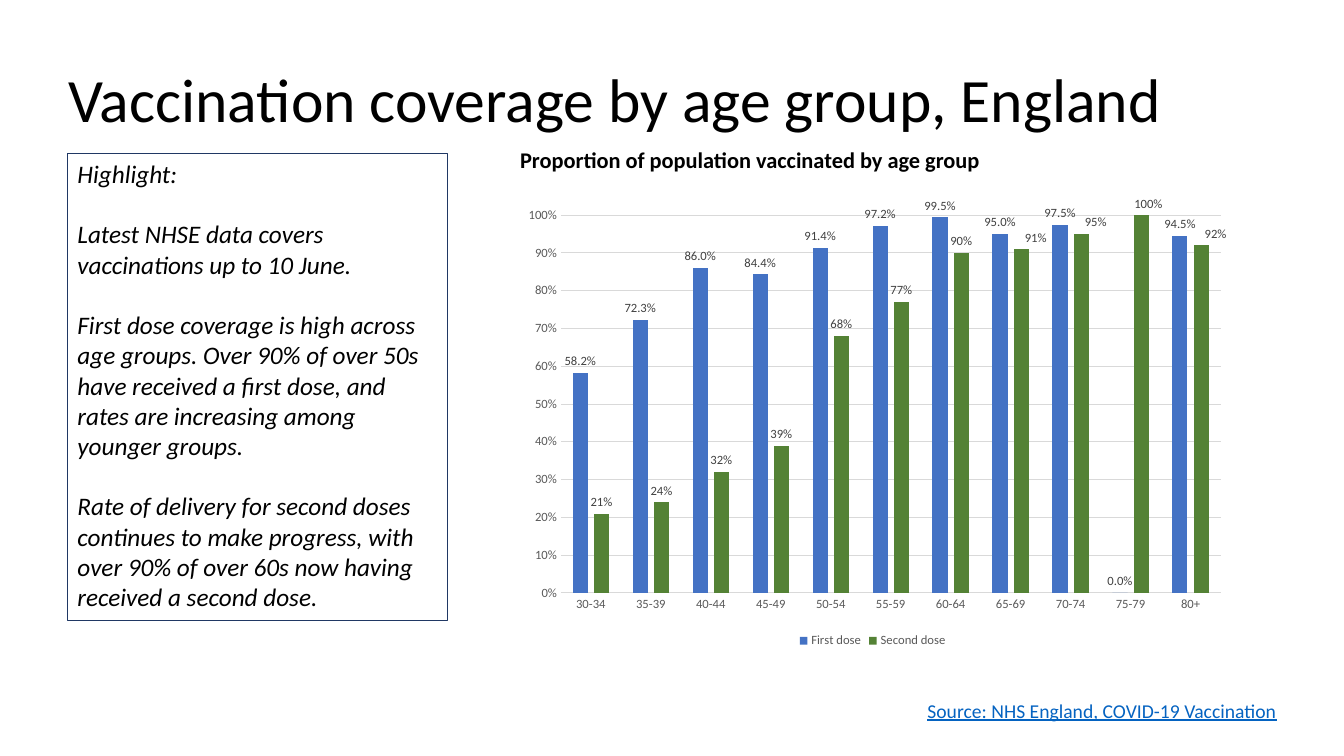
from copy import deepcopy

from lxml import etree
from pptx import Presentation
from pptx.chart.data import CategoryChartData
from pptx.dml.color import RGBColor
from pptx.enum.chart import XL_CHART_TYPE, XL_LABEL_POSITION, XL_LEGEND_POSITION, XL_TICK_MARK
from pptx.enum.shapes import MSO_SHAPE
from pptx.enum.text import MSO_ANCHOR, PP_ALIGN
from pptx.oxml import parse_xml
from pptx.oxml.ns import nsdecls, qn
from pptx.util import Inches, Pt

COLUMN = XL_CHART_TYPE.COLUMN_CLUSTERED
OUTSIDE = XL_LABEL_POSITION.OUTSIDE_END
BOTTOM = XL_LEGEND_POSITION.BOTTOM
NO_TICK = XL_TICK_MARK.NONE
RECT = MSO_SHAPE.RECTANGLE
TOP, MIDDLE = MSO_ANCHOR.TOP, MSO_ANCHOR.MIDDLE
LEFT = PP_ALIGN.LEFT

COLORS = {"text": "000000", "border": "203864", "source": "0563C1",
          "axis": "595959", "grid": "D9D9D9", "label": "404040",
          "first": "4472C4", "second": "548235"}

HIGHLIGHTS = [
    "Highlight:",
    "Latest NHSE data covers vaccinations up to 10 June.",
    "First dose coverage is high across age groups. Over 90% of over 50s have "
    "received a first dose, and rates are increasing among younger groups.",
    "Rate of delivery for second doses continues to make progress, with over "
    "90% of over 60s now having received a second dose.",
]
AGE_GROUPS = [f"{age}-{age + 4}" for age in range(30, 80, 5)] + ["80+"]
DOSES = [
    ("First dose", "first", "0.0%",
     [0.582, 0.723, 0.86, 0.844, 0.914, 0.972, 0.995, 0.95, 0.975, 0, 0.945]),
    ("Second dose", "second", "0%",
     [0.21, 0.24, 0.32, 0.39, 0.68, 0.77, 0.9, 0.91, 0.95, 1, 0.92]),
]
PLOT_AREA = {"x": 0.07, "y": 0.04, "w": 0.91, "h": 0.83}
LABEL_SHIFTS = {"65-69": 0.02, "70-74": 0.02, "75-79": 0.01, "80+": 0.02}


def rgb(name):
    """Return the named colour."""
    return RGBColor.from_string(COLORS[name])


def set_font(font, size, color="text", **formats):
    """Apply a font format."""
    for name, value in {"name": "Calibri", "size": Pt(size), **formats}.items():
        setattr(font, name, value)
    font.color.rgb = rgb(color)


def set_line(line, color):
    """Apply a thin solid line."""
    line.color.rgb = rgb(color)
    line.width = Pt(0.75)


def add_text(s, box, text, size, color="text", anchor=TOP, wrap=False, spacing=None, **formats):
    """Place one line of text in a box."""
    tf = s.shapes.add_textbox(*map(Inches, box)).text_frame
    tf.word_wrap = wrap
    tf.vertical_anchor = anchor
    p = tf.paragraphs[0]
    p.line_spacing = spacing
    r = p.add_run()
    r.text = text
    set_font(r.font, size, color, **formats)


def add_highlights(s, box):
    """Place the bordered panel of highlights."""
    sp = s.shapes.add_shape(RECT, *map(Inches, box))
    sp.shadow.inherit = False
    sp.fill.background()
    set_line(sp.line, "border")
    tf = sp.text_frame
    tf.word_wrap = True
    tf.vertical_anchor = TOP
    for i, text in enumerate(HIGHLIGHTS):
        p = tf.paragraphs[0] if i == 0 else tf.add_paragraph()
        p.alignment = LEFT
        if i:
            p.space_before = Pt(21.6)
        r = p.add_run()
        r.text = text
        set_font(r.font, 18, italic=True)


def make_layout(settings):
    """Return a manual layout element."""
    layout = parse_xml(f"<c:layout {nsdecls('c')}><c:manualLayout/></c:layout>")
    for tag, value in settings.items():
        etree.SubElement(layout[0], qn(f"c:{tag}")).set("val", str(value))
    return layout


def set_plot_area(chart):
    """Fix the inner plot area as shares of the chart."""
    plot_area = chart.element.find(".//" + qn("c:plotArea"))
    for old in plot_area.findall(qn("c:layout")):
        plot_area.remove(old)
    edges = {"layoutTarget": "inner", "xMode": "edge", "yMode": "edge"}
    plot_area.insert(0, make_layout({**edges, **PLOT_AREA}))


def shift_labels(series):
    """Move crowded labels right by a share of the chart width."""
    labels = series.data_labels._element
    shared = [part for part in labels if part.tag != qn("c:showLeaderLines")]
    for position, (group, shift) in enumerate(LABEL_SHIFTS.items()):
        label = parse_xml(f"<c:dLbl {nsdecls('c')}/>")
        etree.SubElement(label, qn("c:idx")).set("val", str(AGE_GROUPS.index(group)))
        label.append(make_layout({"x": shift, "y": 0}))
        label.extend(deepcopy(shared))
        labels.insert(position, label)


def format_axes(chart):
    """Style both axes and the gridlines."""
    cat, val = chart.category_axis, chart.value_axis
    for axis in (cat, val):
        axis.major_tick_mark = axis.minor_tick_mark = NO_TICK
        set_font(axis.tick_labels.font, 9, "axis")
    set_line(cat.format.line, "grid")
    val.format.line.fill.background()
    set_line(val.major_gridlines.format.line, "grid")
    limits = {"minimum_scale": 0, "maximum_scale": 1, "major_unit": 0.1}
    for name, value in limits.items():
        setattr(val, name, value)
    val.tick_labels.number_format = "0%"
    val.tick_labels.number_format_is_linked = False


def add_coverage_chart(s, box):
    """Place the clustered columns of dose coverage."""
    data = CategoryChartData()
    data.categories = AGE_GROUPS
    for name, _, number_format, values in DOSES:
        data.add_series(name, values, number_format)
    chart = s.shapes.add_chart(COLUMN, *map(Inches, box), data).chart
    set_font(chart.font, 10)
    chart.has_title = False
    chart.has_legend = True
    chart.legend.position = BOTTOM
    chart.legend.include_in_layout = False
    set_font(chart.legend.font, 9, "axis")
    plot = chart.plots[0]
    plot.vary_by_categories = False
    plot.gap_width, plot.overlap = 156, -40
    for series, (_, color, number_format, _) in zip(plot.series, DOSES):
        series.format.fill.solid()
        series.format.fill.fore_color.rgb = rgb(color)
        labels = series.data_labels
        formats = {"show_value": True, "position": OUTSIDE,
                   "number_format": number_format, "number_format_is_linked": False}
        for name, value in formats.items():
            setattr(labels, name, value)
        set_font(labels.font, 9, "label")
    shift_labels(plot.series[1])
    format_axes(chart)
    set_plot_area(chart)


def main():
    """Build and save the slide."""
    prs = Presentation()
    prs.slide_width, prs.slide_height = Inches(13.33), Inches(7.5)
    s = prs.slides.add_slide(prs.slide_layouts[6])
    add_text(s, (0.58, 0.29, 11.5, 1.45), "Vaccination coverage by age group, England",
             44, anchor=MIDDLE, wrap=True, spacing=0.9)
    add_highlights(s, (0.67, 1.52, 3.77, 4.64))
    add_text(s, (9.1, 6.88, 3.73, 0.34), "Source: NHS England, COVID-19 Vaccination",
             14, "source", underline=True)
    add_text(s, (5.06, 1.4, 4.83, 0.67), "Proportion of population vaccinated by age group",
             16, bold=True)
    add_coverage_chart(s, (5.06, 1.95, 7.19, 4.52))
    prs.save("out.pptx")


if __name__ == "__main__":
    main()
